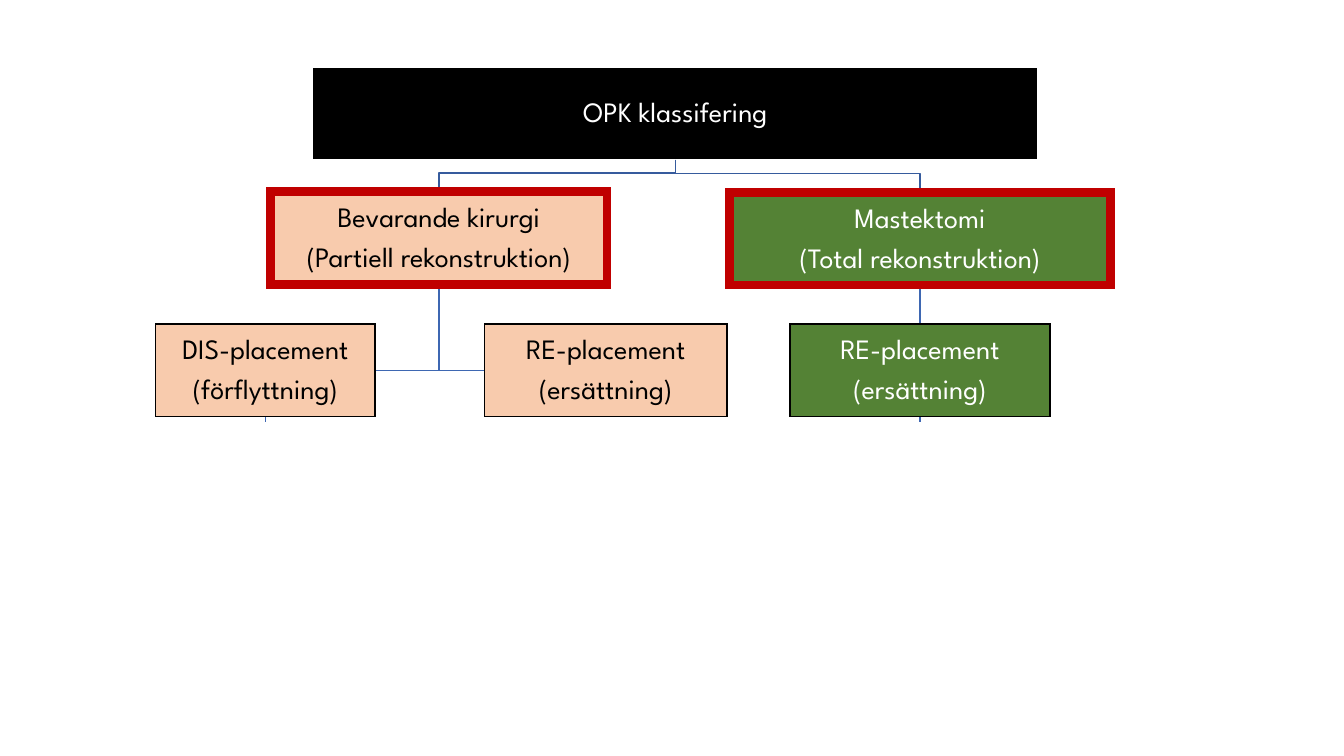
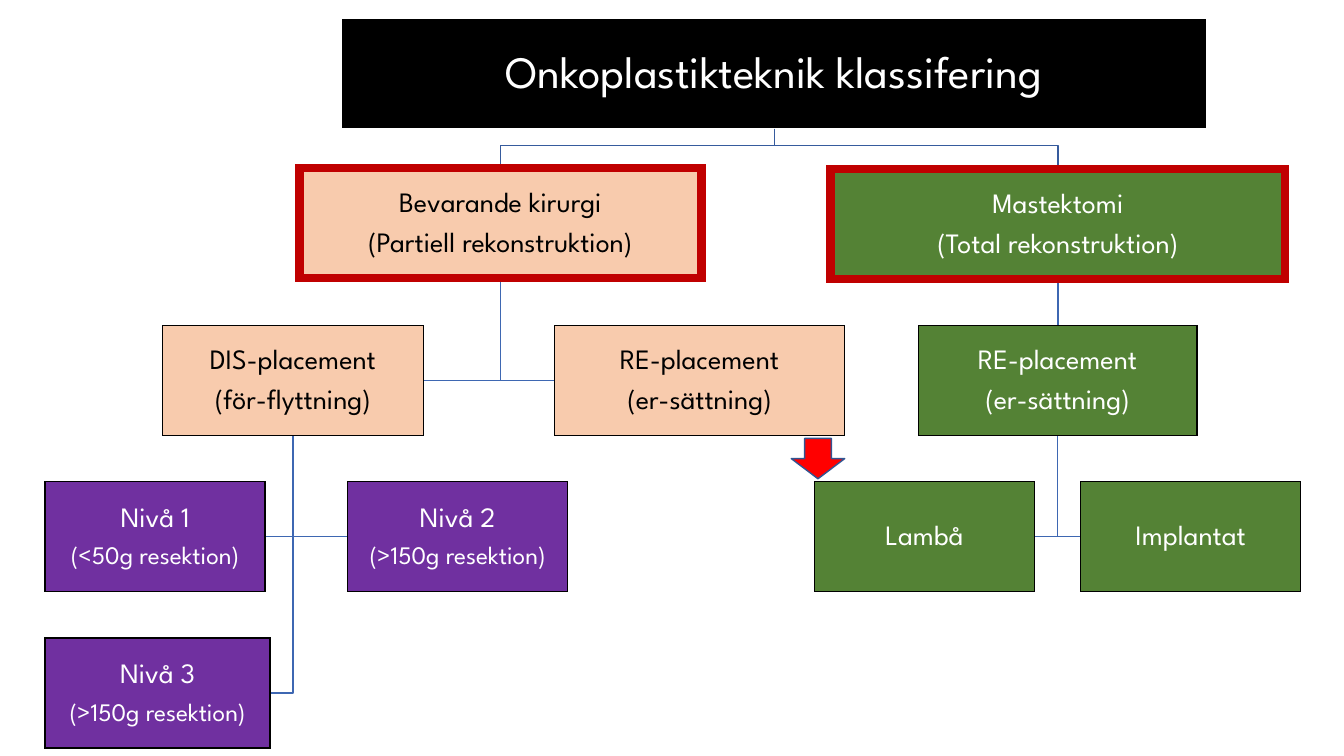
from lxml import etree
from pptx import Presentation
from pptx.dml.color import RGBColor
from pptx.enum.shapes import MSO_CONNECTOR, MSO_SHAPE
from pptx.enum.text import MSO_ANCHOR, MSO_AUTO_SIZE, PP_ALIGN
from pptx.oxml.ns import qn
from pptx.util import Pt

STRAIGHT = MSO_CONNECTOR.STRAIGHT
RECTANGLE = MSO_SHAPE.RECTANGLE
DOWN_ARROW = MSO_SHAPE.DOWN_ARROW
TITLE_ONLY = 5
FONT = "League Spartan"

COLORS = {
    "black": "000000",
    "white": "FFFFFF",
    "peach": "F8CBAD",
    "green": "548235",
    "purple": "7030A0",
    "dark red": "C00000",
    "red": "FF0000",
    "title link": "365B9D",
    "link": "3E67B2",
    "arrow edge": "325491",
}
COLORS = {name: RGBColor.from_string(value) for name, value in COLORS.items()}

# fill, text, edge, edge width, size of first line, size of second line
STYLES = {
    "title": ("black", "white", "white", 1, 20, 20),
    "big title": ("black", "white", "white", 1, 32, 32),
    "partial": ("peach", "black", "dark red", 6, 20, 20),
    "partial method": ("peach", "black", "black", 1, 20, 20),
    "total": ("green", "white", "dark red", 6, 20, 20),
    "total method": ("green", "white", "black", 1, 20, 20),
    "level": ("purple", "white", "black", 1, 20, 18),
}
FRAME_FORMAT = {
    "word_wrap": True,
    "auto_size": MSO_AUTO_SIZE.NONE,
    "vertical_anchor": MSO_ANCHOR.MIDDLE,
    "margin_left": Pt(1),
    "margin_right": Pt(1),
    "margin_top": Pt(1),
    "margin_bottom": Pt(1),
}
PARAGRAPH_FORMAT = {
    "alignment": PP_ALIGN.CENTER,
    "line_spacing": 0.9,
    "space_before": Pt(0),
}

# Boxes: key -> (row, left, width, style, lines); row 0 is just below the title.
# Links: parent -> children; stubs: boxes with a short line below them.
CHARTS = [
    {
        "title": ("OPK klassifering", "title", 223.2, 47.8, 518.4),
        "height": 66.2, "rows": [136.9, 231.4],
        "boxes": {
            "partial": (0, 193.3, 240.5, "partial", ["Bevarande kirurgi", "(Partiell rekonstruktion)"]),
            "total": (0, 521.1, 272.2, "total", ["Mastektomi", "(Total rekonstruktion)"]),
            "displace": (1, 111.3, 156.6, "partial method", ["DIS-placement", "(förflyttning)"]),
            "replace": (1, 345.9, 173.5, "partial method", ["RE-placement", "(ersättning)"]),
            "total replace": (1, 564.2, 185.8, "total method", ["RE-placement", "(ersättning)"]),
        },
        "links": {"partial": ["displace", "replace"], "total": ["total replace"]},
        "stubs": ["displace", "total replace"],
    },
    {
        "title": ("Onkoplastikteknik klassifering", "big title", 244, 13.4, 618),
        "height": 78.5, "rows": [120.2, 232.5, 344, 455.7],
        "boxes": {
            "partial": (0, 213.8, 287.3, "partial", ["Bevarande kirurgi", "(Partiell rekonstruktion)"]),
            "total": (0, 593.3, 324.7, "total", ["Mastektomi", "(Total rekonstruktion)"]),
            "displace": (1, 115.9, 186.8, "partial method", ["DIS-placement", "(för-flyttning)"]),
            "replace": (1, 396, 207.4, "partial method", ["RE-placement", "(er-sättning)"]),
            "total replace": (1, 656, 198.9, "total method", ["RE-placement", "(er-sättning)"]),
            "level 1": (2, 32.2, 157.2, "level", ["Nivå 1", "(<50g resektion)"]),
            "level 2": (2, 248.4, 157, "level", ["Nivå 2", "(>150g resektion)"]),
            "level 3": (3, 32.2, 160.8, "level", ["Nivå 3", "(>150g resektion)"]),
            "flap": (2, 581.8, 157, "total method", ["Lambå"]),
            "implant": (2, 772, 157, "total method", ["Implantat"]),
        },
        "links": {
            "partial": ["displace", "replace"],
            "total": ["total replace"],
            "displace": ["level 1", "level 2", "level 3"],
            "total replace": ["flap", "implant"],
        },
        "stubs": [],
    },
]
STUB_LENGTH = 3.5
BEND_POSITION = 0.42  # share of the gap between the title and the box below
TOTAL_DROP = 0.7  # the mastectomy box sits slightly below its row


def draw_link(slide, points, color="link"):
    """Join the points by one line: a connector if straight, else a bent path."""
    start, *rest = [(Pt(x), Pt(y)) for x, y in points]
    if len(rest) == 1:
        link = slide.shapes.add_connector(STRAIGHT, *start, *rest[0])
    else:
        path_builder = slide.shapes.build_freeform(*start)
        path_builder.add_line_segments(rest, close=False)
        link = path_builder.convert_to_shape()
        link.fill.background()
    link.line.color.rgb = COLORS[color]
    link.line.width = Pt(1)
    etree.SubElement(link.element.spPr, qn("a:effectLst"))


def format_box(box, style, lines):
    """Give a rectangle or the title its style and its lines of text."""
    fill, ink, edge, edge_width, *sizes = STYLES[style]
    box.fill.solid()
    box.fill.fore_color.rgb = COLORS[fill]
    box.line.color.rgb = COLORS[edge]
    box.line.width = Pt(edge_width)
    etree.SubElement(box.line._get_or_add_ln(), qn("a:miter"), lim="800000")
    box.shadow.inherit = False
    frame = box.text_frame
    for name, value in FRAME_FORMAT.items():
        setattr(frame, name, value)
    frame.text = "\n".join(lines)
    for paragraph, size in zip(frame.paragraphs, sizes):
        for name, value in PARAGRAPH_FORMAT.items():
            setattr(paragraph, name, value)
        paragraph.space_after = Pt(0.35 * size)
        font = paragraph.runs[0].font
        font.name = FONT
        font.size = Pt(size)
        font.color.rgb = COLORS[ink]


prs = Presentation()
prs.slide_width, prs.slide_height = Pt(960), Pt(540)

for chart in CHARTS:
    slide = prs.slides.add_slide(prs.slide_layouts[TITLE_ONLY])
    height = chart["height"]
    boxes = chart["boxes"]
    tops = {key: chart["rows"][box[0]] for key, box in boxes.items()}
    tops["total"] += TOTAL_DROP
    centers = {key: box[1] + box[2] / 2 for key, box in boxes.items()}

    heading, title_style, left, top, width = chart["title"]
    title = slide.shapes.title
    title.left, title.top, title.width, title.height = Pt(left), Pt(top), Pt(width), Pt(height)
    format_box(title, title_style, [heading])

    title_center, title_bottom = left + width / 2, top + height
    for key in ("total", "partial"):
        center, box_top = centers[key], tops[key]
        bend = title_bottom + BEND_POSITION * (box_top - title_bottom)
        draw_link(slide, [(title_center, title_bottom), (title_center, bend),
                          (center, bend), (center, box_top)], "title link")

    for parent, children in chart["links"].items():
        trunk, bottom = centers[parent], tops[parent] + height
        if len(children) == 1:
            draw_link(slide, [(trunk, bottom), (trunk, tops[children[0]])])
            continue
        for child in children:
            _, child_left, child_width, *_ = boxes[child]
            near_edge = child_left if child_left > trunk else child_left + child_width
            middle = tops[child] + height / 2
            draw_link(slide, [(trunk, bottom), (trunk, middle), (near_edge, middle)])

    for key in chart["stubs"]:
        center, bottom = centers[key], tops[key] + height
        draw_link(slide, [(center, bottom), (center, bottom + STUB_LENGTH)])

    for key, (_, left, width, style, lines) in boxes.items():
        box = slide.shapes.add_shape(RECTANGLE, Pt(left), Pt(tops[key]), Pt(width), Pt(height))
        format_box(box, style, lines)

# Red arrow from replacement to flap on the last slide
arrow = slide.shapes.add_shape(DOWN_ARROW, Pt(565.2), Pt(313.2), Pt(38.2), Pt(28.8))
arrow.shadow.inherit = False
arrow.fill.solid()
arrow.fill.fore_color.rgb = COLORS["red"]
arrow.line.color.rgb = COLORS["arrow edge"]
arrow.line.width = Pt(1)

prs.save("out.pptx")
